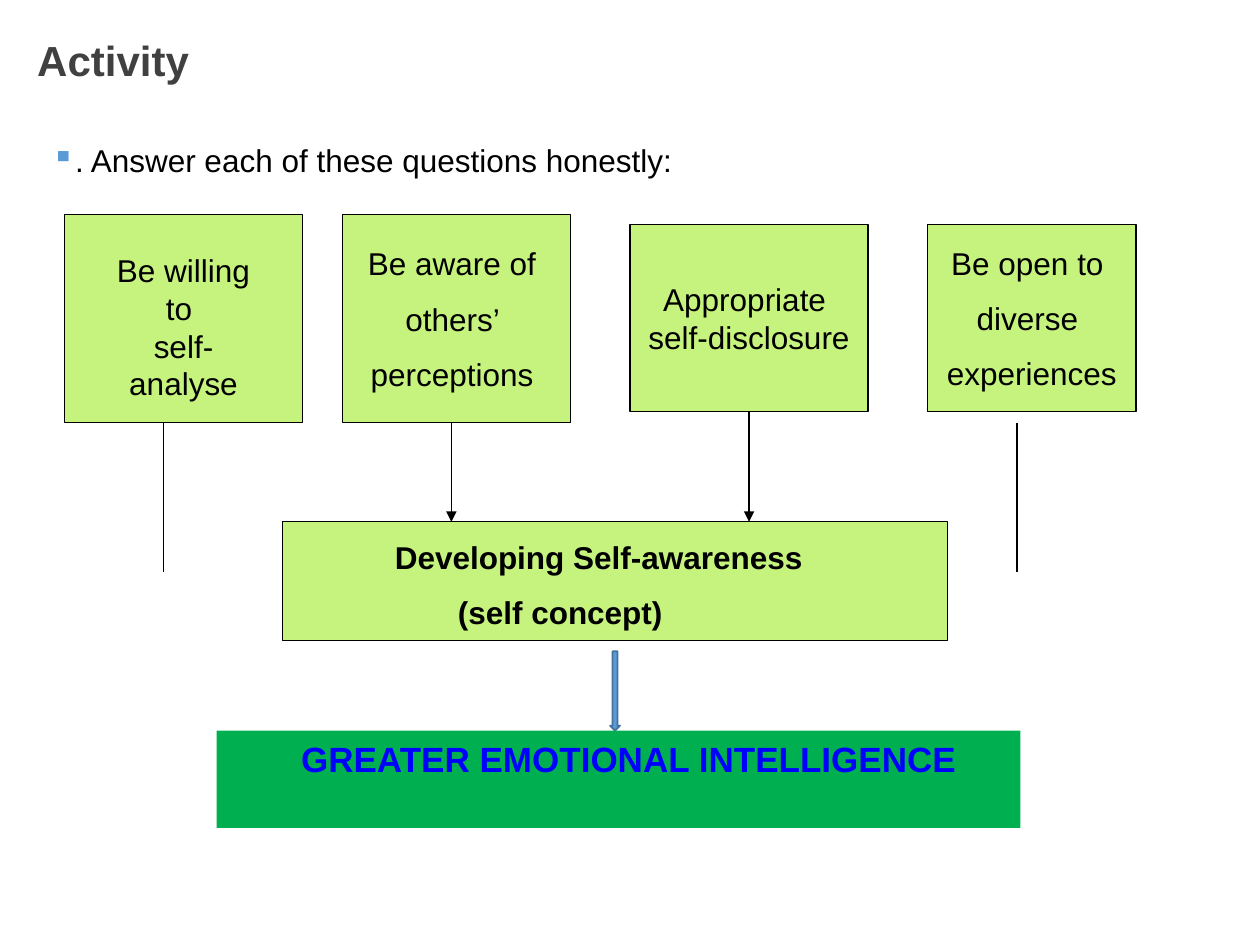
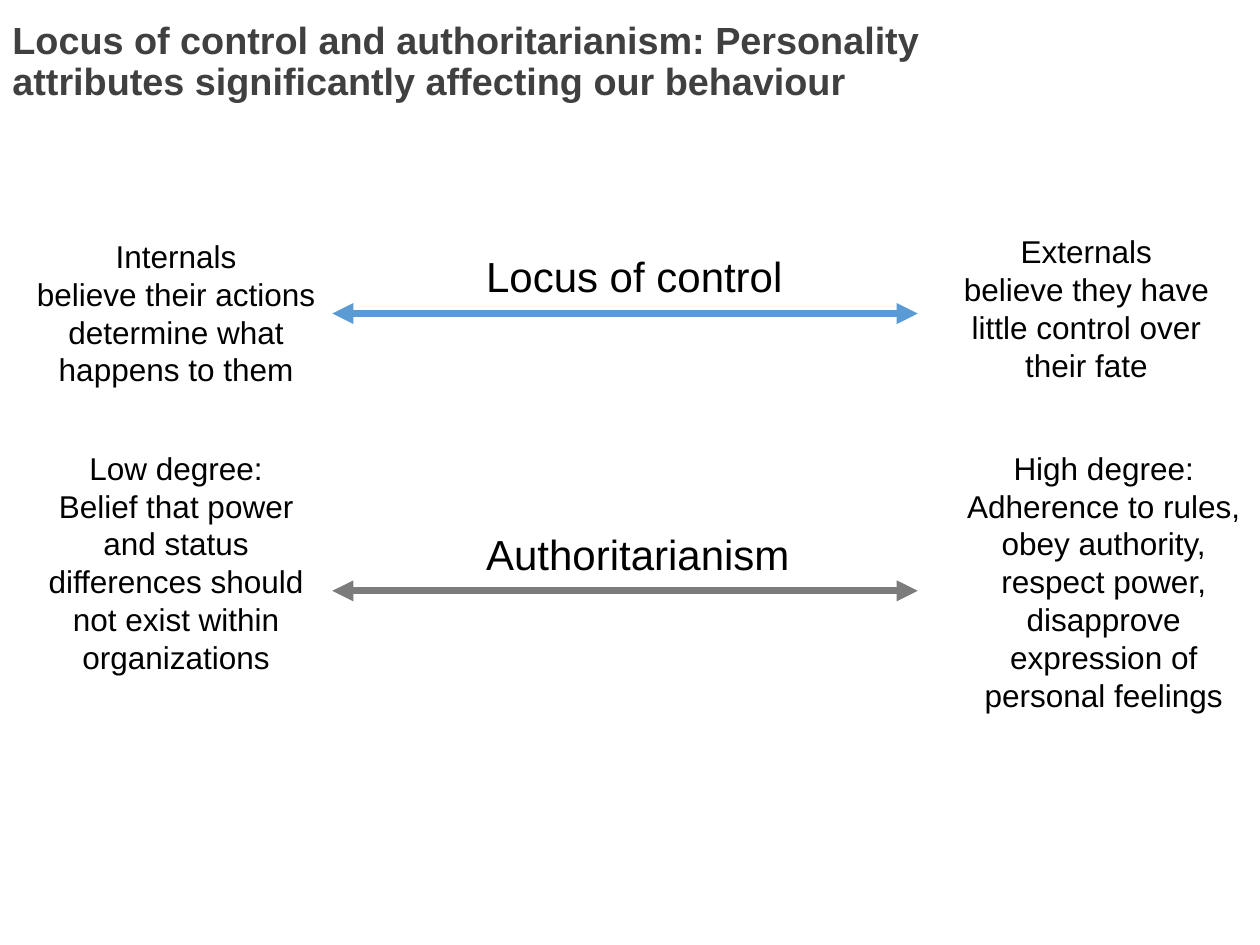
from pptx import Presentation
from pptx.dml.color import RGBColor
from pptx.enum.shapes import MSO_CONNECTOR, MSO_SHAPE
from pptx.enum.text import MSO_ANCHOR as Anchor, MSO_AUTO_SIZE as AutoSize, PP_ALIGN as Align
from pptx.oxml.ns import qn
from pptx.util import Cm, Pt
from lxml.etree import SubElement

# Shared style
FONT = "Arial"
COLOURS = {"title": "404040", "text": "000000", "lime": "C6F27E", "green": "00B050",
           "blue": "5B9BD5", "dark blue": "43739E", "grey": "7C7C7C", "loud": "0000FF"}
TITLE_TOP, TITLE_HEIGHT = 0.53, 1.47

# Slide 1 content, lengths in cm
QUESTION = ". Answer each of these questions honestly:"
CONDITIONS = [  # left, top, width, height, paragraphs, text format
    (1.3, 4.32, 4.8, 4.2, ["Be willing to ", "self-analyse"],
     {"anchor": Anchor.TOP, "margins": (0.85, 0.74, 0.85, 0)}),
    (6.9, 4.32, 4.6, 4.2, ["Be aware of ", "others’ ", "perceptions "],
     {"wrap": False, "gap": 10}),
    (12.7, 4.52, 4.8, 3.78, ["Appropriate ", "self-disclosure"], {"wrap": False}),
    (18.7, 4.52, 4.2, 3.78, ["Be open to ", "diverse ", "experiences"],
     {"wrap": False, "gap": 10}),
]
SELF_AWARENESS = ["Developing Self-awareness", "\t(self concept)"]
OUTCOME = ["GREATER EMOTIONAL INTELLIGENCE"]
LOOSE_LINES = [3.3, 20.5]

# Slide 2 content: label, colour, then (left, top, width, height, paragraphs) of each pole
SCALES = [
    ("Locus of control", "blue", [
        (0.4, 4.65, 6.3, 3.33,
         ["Internals\vbelieve their actions determine what happens to them"]),
        (19.1, 4.55, 5.6, 3.33,
         ["Externals\vbelieve they have little control over their fate"])]),
    ("Authoritarianism", "grey", [
        (0.4, 8.92, 6.3, 4.88,
         ["Low degree:\vBelief that power and status differences should not exist "
          "within organizations"]),
        (19.1, 8.92, 6.3, 5.64,
         ["High degree:", "Adherence to rules, obey authority, respect power, "
          "disapprove expression of personal feelings"])]),
]
SCALE_LEFT, SCALE_RIGHT, SCALE_TOP, SCALE_PITCH = 6.7, 18.5, 6.32, 5.59


def rgb(name):
    return RGBColor.from_string(COLOURS[name])


def format_runs(paragraph, size, colour, bold):
    for run in paragraph.runs:
        for key, value in {"name": FONT, "size": Pt(size), "bold": bold}.items():
            setattr(run.font, key, value)
        run.font.color.rgb = rgb(colour)


def write(shape, paragraphs, size=18, colour="text", bold=False, align=Align.CENTER,
          anchor=Anchor.TOP, wrap=True, gap=0, margins=(0.25, 0.13, 0.25, 0.13)):
    frame = shape.text_frame
    sides = ("margin_left", "margin_top", "margin_right", "margin_bottom")
    values = dict(zip(sides, map(Cm, margins)), word_wrap=wrap,
                  vertical_anchor=anchor, auto_size=AutoSize.NONE)
    for key, value in values.items():
        setattr(frame, key, value)
    for index, text in enumerate(paragraphs):
        paragraph = frame.add_paragraph() if index else frame.paragraphs[0]
        paragraph.text = text
        paragraph.alignment = align
        if index and gap:
            paragraph.space_before = Pt(gap)
        format_runs(paragraph, size, colour, bold)


def add_titled_slide(presentation, title, left, width, size):
    slide = presentation.slides.add_slide(presentation.slide_layouts[5])
    shape = slide.shapes.title
    box = {"left": left, "top": TITLE_TOP, "width": width, "height": TITLE_HEIGHT}
    for key, value in box.items():
        setattr(shape, key, Cm(value))
    write(shape, [title], size, "title", True, Align.LEFT, Anchor.MIDDLE)
    shape.text_frame.paragraphs[0].line_spacing = 0.9
    return slide


def add_text(slide, left, top, width, height, paragraphs, **style):
    shape = slide.shapes.add_textbox(Cm(left), Cm(top), Cm(width), Cm(height))
    write(shape, paragraphs, **style)
    return shape


def add_block(slide, left, top, width, height, fill="lime", line="text", weight=0.75,
              kind=MSO_SHAPE.RECTANGLE):
    shape = slide.shapes.add_shape(kind, Cm(left), Cm(top), Cm(width), Cm(height))
    shape.shadow.inherit = False
    shape.fill.solid()
    shape.fill.fore_color.rgb = rgb(fill)
    if line:
        shape.line.color.rgb = rgb(line)
        shape.line.width = Pt(weight)
    else:
        shape.line.fill.background()
    return shape


def add_line(slide, x1, y1, x2, y2, colour="text", weight=0.75, arrows=()):
    line = slide.shapes.add_connector(MSO_CONNECTOR.STRAIGHT, Cm(x1), Cm(y1), Cm(x2), Cm(y2))
    line.line.color.rgb = rgb(colour)
    line.line.width = Pt(weight)
    properties = line.line._get_or_add_ln()
    for end in arrows:
        SubElement(properties, qn(f"a:{end}"), type="triangle")
    SubElement(line._element.spPr, qn("a:effectLst"))
    return line


def add_bullet(paragraph, character, colour):
    properties = paragraph._p.get_or_add_pPr()
    bullet_colour = SubElement(properties, qn("a:buClr"))
    SubElement(bullet_colour, qn("a:srgbClr"), val=COLOURS[colour])
    SubElement(properties, qn("a:buChar"), char=character)


def build_activity(presentation):
    slide = add_titled_slide(presentation, "Activity", 0.5, 21.6, 24)
    question = add_text(slide, 0.79, 2.72, 23.8, 3, [QUESTION], align=Align.LEFT)
    add_bullet(question.text_frame.paragraphs[0], "▪", "blue")

    # Four conditions
    blocks = []
    for left, top, width, height, paragraphs, style in CONDITIONS:
        block = add_block(slide, left, top, width, height)
        write(block, paragraphs, **{"anchor": Anchor.MIDDLE, **style})
        blocks.append(block)

    # Self-awareness and its outcome
    awareness = add_block(slide, 5.7, 10.52, 13.4, 2.4)
    write(awareness, SELF_AWARENESS, bold=True, align=Align.LEFT, gap=10,
          margins=(2.26, 0.33, 0.25, 0))
    add_block(slide, 12.3, 13.13, 0.2, 1.6, "blue", "dark blue", 1, MSO_SHAPE.DOWN_ARROW)
    outcome = add_block(slide, 4.37, 14.73, 16.2, 1.96, "green", None)
    write(outcome, OUTCOME, 20, "loud", True, margins=(0.66, 0.13, 0.25, 0.13))

    # Lines below the conditions
    for x in LOOSE_LINES:
        add_line(slide, x, 8.53, x, 11.53)
    add_line(slide, 9.1, 8.52, 9.1, 10.52, arrows=["tailEnd"])
    disclosure = add_line(slide, 15.1, 8.3, 15.1, 10.52, arrows=["tailEnd"])
    disclosure.begin_connect(blocks[2], 2)


def build_attributes(presentation):
    title = ("Locus of control and authoritarianism: Personality attributes "
             "significantly affecting our behaviour")
    slide = add_titled_slide(presentation, title, 0, 19.9, 21.6)
    for index, (label, colour, poles) in enumerate(SCALES):
        y = SCALE_TOP + index * SCALE_PITCH
        add_line(slide, SCALE_LEFT, y, SCALE_RIGHT, y, colour, 4, ["headEnd", "tailEnd"])
        add_text(slide, 9.55, y - 1.39, 7.6, 1.27, [label], size=24, align=Align.LEFT)
        for pole in poles:
            add_text(slide, *pole)


def main():
    presentation = Presentation()
    presentation.slide_width, presentation.slide_height = Cm(25.4), Cm(19.05)
    build_activity(presentation)
    build_attributes(presentation)
    presentation.save("out.pptx")


if __name__ == "__main__":
    main()
